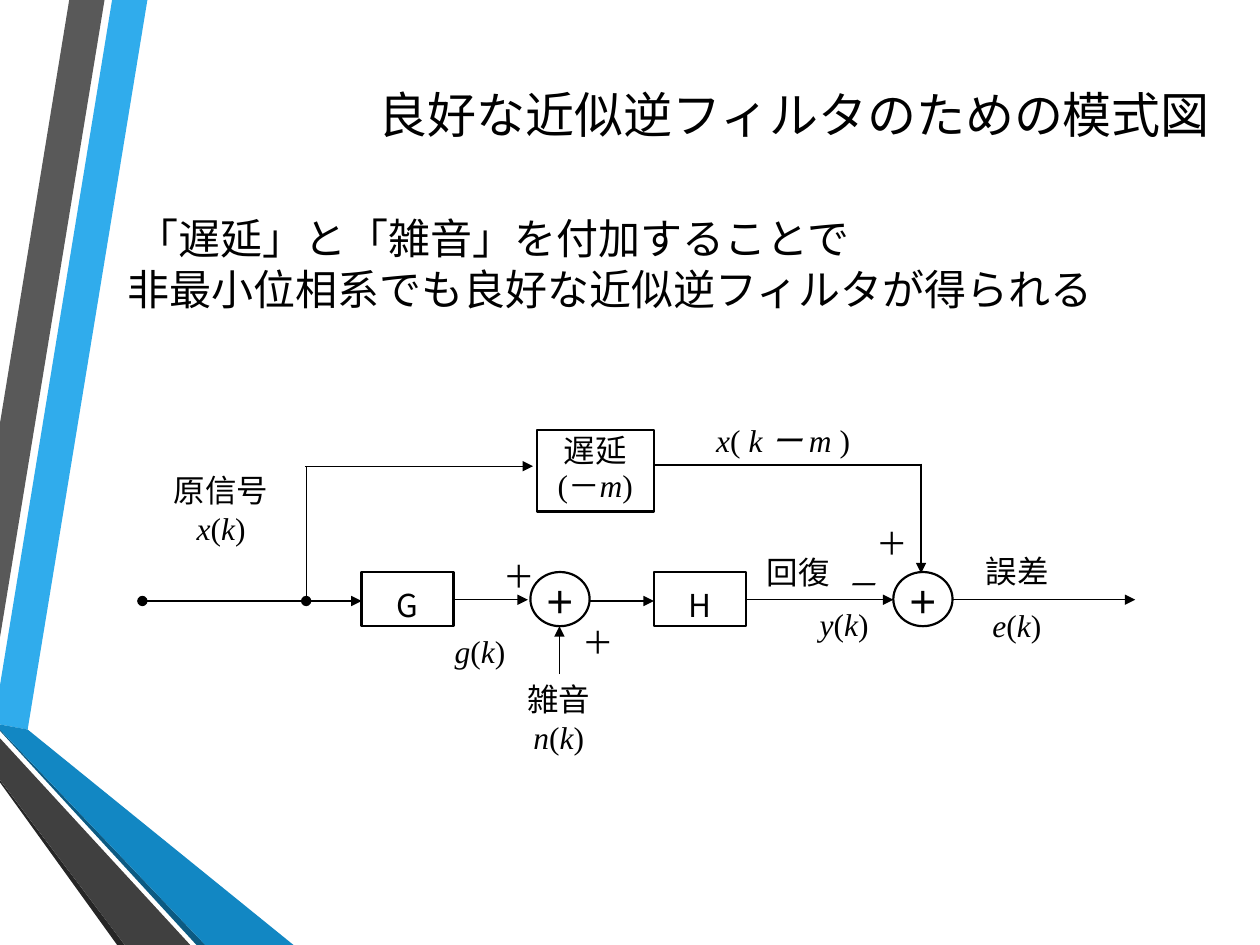
from lxml import etree
from pptx import Presentation
from pptx.dml.color import RGBColor as RGB
from pptx.enum.shapes import MSO_CONNECTOR as CONN, MSO_SHAPE as SHAPE
from pptx.enum.text import MSO_ANCHOR as ANCHOR, PP_ALIGN as ALIGN
from pptx.oxml.ns import qn
from pptx.util import Pt

PX = 9144  # 100 px to the inch

THEME = {
    "ink": RGB.from_string("000000"),
    "paper": RGB.from_string("FFFFFF"),
    "serif": "Times New Roman",
    "sans": "Calibri",
    "block": "Noto Sans CJK JP",
    "title": 28,
    "body": 24,
    "label": 18,
    "outline": 1.25,
    "wire": 0.75,
}

prs = Presentation()
prs.slide_width, prs.slide_height = 1000 * PX, 750 * PX
slide = prs.slides.add_slide(prs.slide_layouts[6])
shapes = slide.shapes


def write(shape, lines, font=THEME["serif"], size=THEME["label"], align=ALIGN.CENTER,
          anchor=ANCHOR.TOP, leading=None, insets=None, bold=False):
    """Fill a shape with lines of text; parts between asterisks are italic."""
    frame = shape.text_frame
    frame.word_wrap = True
    frame.vertical_anchor = anchor
    if insets:
        frame.margin_left, frame.margin_top, frame.margin_right, frame.margin_bottom = (
            side * PX for side in insets)
    for i, line in enumerate(lines):
        para = frame.paragraphs[0] if i == 0 else frame.add_paragraph()
        para.alignment = align
        if leading:
            para.line_spacing = Pt(leading)
        para.font.name, para.font.size, para.font.bold = font, Pt(size), bold
        para.font.color.rgb = THEME["ink"]
        for n, part in enumerate(line.split("*")):
            if part:
                run = para.add_run()
                run.text = part
                if n % 2:
                    run.font.italic = True


def box(x, y, w, h):
    return shapes.add_textbox(x * PX, y * PX, w * PX, h * PX)


# Ribbon along the left edge
ribbon = [
    ("30ACEC", [(0, 544), (0, 575), (22, 579), (117, 0), (89, 0)]),
    ("595959", [(83, 0), (55, 0), (0, 336), (0, 506)]),
    ("262626", [(0, 619), (0, 621), (93, 750), (99, 750)]),
    ("0C5A82", [(0, 579), (0, 580), (156, 750), (163, 750)]),
    ("1287C3", [(0, 579), (163, 750), (233, 750), (22, 579), (0, 575)]),
    ("404040", [(0, 619), (99, 750), (151, 750), (0, 586)]),
]
for color, points in ribbon:
    outline = shapes.build_freeform(*points[0], scale=PX)
    outline.add_line_segments(points[1:], close=True)
    band = outline.convert_to_shape()
    band.shadow.inherit = False
    band.fill.solid()
    band.fill.fore_color.rgb = RGB.from_string(color)
    band.line.fill.background()

# Title and statement
write(box(127, 18, 843, 145), ["良好な近似逆フィルタのための模式図"], font=THEME["sans"],
      size=THEME["title"], align=ALIGN.RIGHT, anchor=ANCHOR.MIDDLE)
write(box(91, 164, 841, 91),
      [" 「遅延」と「雑音」を付加することで", "非最小位相系でも良好な近似逆フィルタが得られる"],
      size=THEME["body"], align=ALIGN.LEFT)

# Filters, delay and adders
filter_text = dict(font=THEME["block"], leading=20, anchor=ANCHOR.MIDDLE, insets=(0, 12, 0, 0))
adder_text = dict(font=THEME["sans"], leading=16, anchor=ANCHOR.MIDDLE, insets=(0, 12, 0, 0),
                  bold=True)
delay_text = dict(font=THEME["block"], leading=20, insets=(0, 3, 0, 0))
blocks = [
    (SHAPE.RECTANGLE, (287, 454, 73, 43), ["G"], filter_text),
    (SHAPE.RECTANGLE, (519, 454, 73, 43), ["H"], filter_text),
    (SHAPE.OVAL, (421, 454, 47, 43), ["＋"], adder_text),
    (SHAPE.OVAL, (709, 454, 47, 43), ["＋"], adder_text),
    (SHAPE.RECTANGLE, (426, 341, 93, 65), ["遅延", "(－*m*)"], delay_text),
]
for kind, place, lines, style in blocks:
    block = shapes.add_shape(kind, *(v * PX for v in place))
    block.shadow.inherit = False
    block.fill.solid()
    block.fill.fore_color.rgb = THEME["paper"]
    block.line.color.rgb = THEME["ink"]
    block.line.width = Pt(THEME["outline"])
    write(block, lines, **style)
# The formula line of the delay block is set in the serif face
block.text_frame.paragraphs[1].font.name = THEME["serif"]

# Signal paths: start, end, mark at start, mark at end
wires = [
    (113, 477, 287, 477, "oval", "triangle"),
    (360, 476, 419, 476, None, "triangle"),
    (468, 477, 519, 477, None, "triangle"),
    (592, 476, 709, 476, None, "triangle"),
    (756, 476, 901, 476, None, "triangle"),
    (243, 477, 243, 370, "oval", None),
    (242, 370, 423, 370, None, "triangle"),
    (472 + 47, 369, 732, 369, None, None),
    (731, 368, 731, 455, None, "triangle"),
    (444, 535, 444, 497, None, "triangle"),
]
for x1, y1, x2, y2, head, tail in wires:
    wire = shapes.add_connector(CONN.STRAIGHT, x1 * PX, y1 * PX, x2 * PX, y2 * PX)
    wire.line.color.rgb = THEME["ink"]
    wire.line.width = Pt(THEME["wire"])
    stroke = wire.line._get_or_add_ln()
    for end, mark in (("a:headEnd", head), ("a:tailEnd", tail)):
        if mark:
            etree.SubElement(stroke, qn(end), type=mark)
    etree.SubElement(wire._element.spPr, qn("a:effectLst"))

# Signal names
signals = [
    ((91, 369, 169, 60), ["原信号", "*x*(*k*)"]),
    ((395, 535, 97, 71), ["雑音", "*n*(*k*)"]),
    ((334, 497, 94, 34), ["*g*(*k*)"]),
    ((623, 475, 94, 34), ["*y*(*k*)"]),
    ((760, 476, 94, 34), ["*e*(*k*)"]),
    ((759, 433, 97, 34), ["誤差"]),
    ((585, 434, 97, 34), ["回復"]),
    ((537, 329, 169, 40), ["*x*( *k ー m *)"]),
]
for place, lines in signals:
    write(box(*place), lines)

# Signs at the adder inputs
signs = [
    (651, 449, "*－*", ALIGN.CENTER),
    (677, 417, "＋", ALIGN.CENTER),
    (381, 443, "＋", ALIGN.CENTER),
    (462, 495, "＋", ALIGN.LEFT),
]
for x, y, sign, align in signs:
    write(box(x, y, 63, 36), [sign], align=align, anchor=ANCHOR.MIDDLE, leading=16,
          insets=(0, 0, 0, 0))

prs.save("out.pptx")
